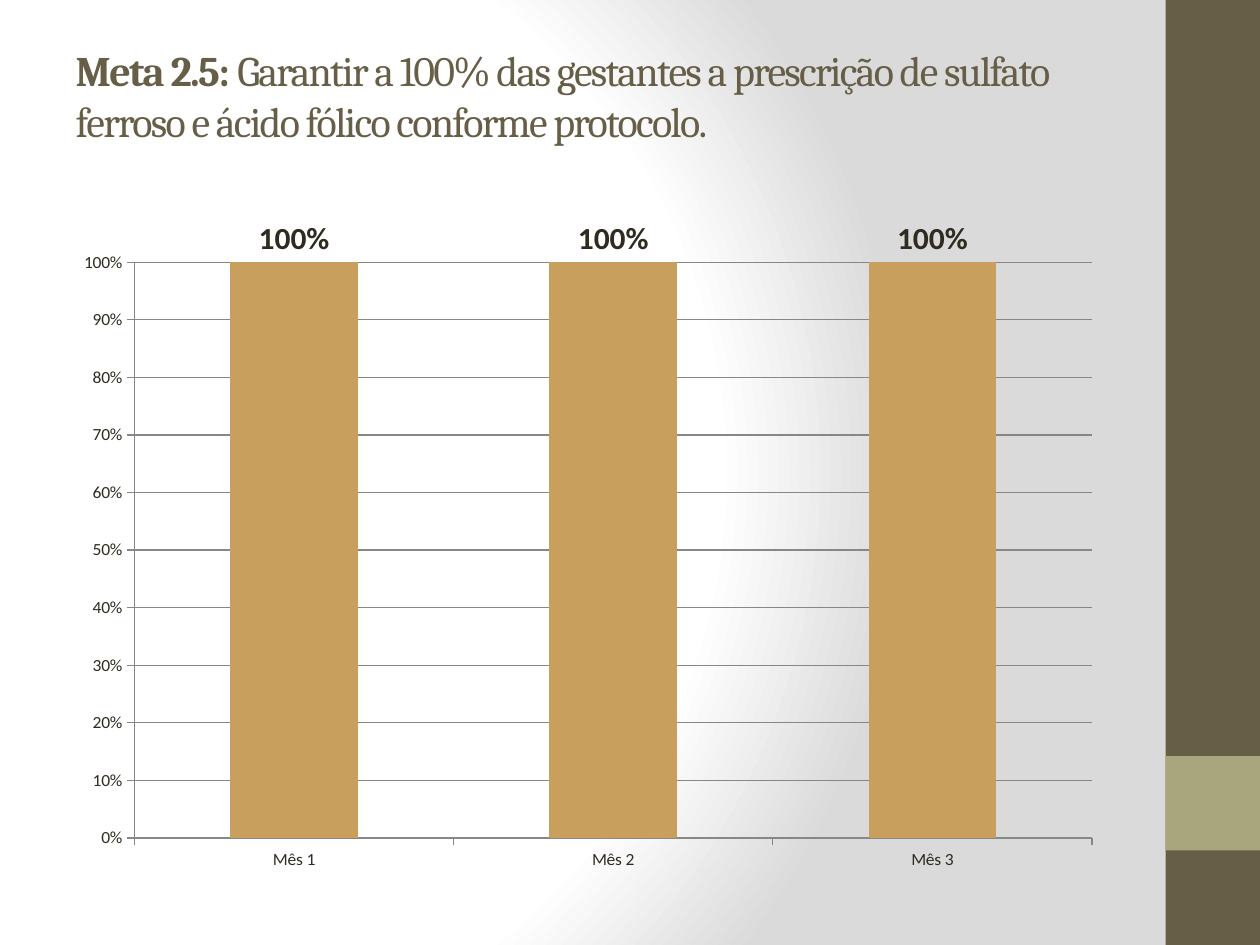
import pptx
import pptx.chart.data
import pptx.dml.color
import pptx.enum.chart
import pptx.enum.text
import pptx.enum.shapes
import pptx.oxml
import pptx.oxml.ns
import pptx.util

Pt = pptx.util.Pt

COLOURS = {
    "white": "FFFFFF",
    "grey": "DADADA",
    "olive": "675E47",
    "sage": "A9A57C",
    "tan": "C89F5D",
    "ink": "2F2B20",
    "line": "878787",
}
BACKGROUND_STOPS = [(0, "white"), (75, "white"), (100, "grey")]
MONTHS = ["Mês 1", "Mês 2", "Mês 3"]
TITLE_PARTS = [
    ("Meta 2.5: ", True),
    ("Garantir a 100% das gestantes a prescrição de sulfato ferroso "
     "e ácido fólico conforme protocolo.", False),
]


def rgb(name):
    return pptx.dml.color.RGBColor.from_string(COLOURS[name])


def set_format(target, values):
    for name, value in values.items():
        setattr(target, name, value)


def set_font(font, colour, **values):
    set_format(font, values)
    font.color.rgb = rgb(colour)


def paint_background(page):
    """Fill the page with a radial gradient, which needs XML."""
    page.background.fill.gradient()
    gradient = page.element.find(".//" + pptx.oxml.ns.qn("a:gradFill"))
    stops = "".join(
        f'<a:gs pos="{position * 1000}"><a:srgbClr val="{COLOURS[name]}"/></a:gs>'
        for position, name in BACKGROUND_STOPS
    )
    radial = pptx.oxml.parse_xml(
        f'<a:gradFill {pptx.oxml.ns.nsdecls("a")} rotWithShape="1">'
        f"<a:gsLst>{stops}</a:gsLst>"
        '<a:path path="circle">'
        '<a:fillToRect l="20000" t="50000" r="100000" b="50000"/>'
        "</a:path></a:gradFill>"
    )
    gradient.getparent().replace(gradient, radial)


def add_band(page, top, height, colour):
    band = page.shapes.add_shape(
        pptx.enum.shapes.MSO_SHAPE.RECTANGLE, Pt(666), Pt(top), Pt(54), Pt(height)
    )
    band.shadow.inherit = False
    band.fill.solid()
    band.fill.fore_color.rgb = rgb(colour)
    band.line.fill.background()


def write_title(page):
    title = page.shapes.title
    set_format(title, {
        "left": Pt(36), "top": Pt(21.6), "width": Pt(600), "height": Pt(90),
    })
    frame = title.text_frame
    set_format(frame, {
        "word_wrap": True,
        "auto_size": pptx.enum.text.MSO_AUTO_SIZE.NONE,
        "vertical_anchor": pptx.enum.text.MSO_ANCHOR.MIDDLE,
        "margin_bottom": Pt(28),
    })
    para = frame.paragraphs[0]
    para.alignment = pptx.enum.text.PP_ALIGN.LEFT
    for text, bold in TITLE_PARTS:
        span = para.add_run()
        span.text = text
        set_font(span.font, "olive", name="Cambria", size=Pt(24), bold=bold)
        span.font._element.set("spc", "-100")


def format_axis(axis):
    axis.major_tick_mark = pptx.enum.chart.XL_TICK_MARK.OUTSIDE
    axis.minor_tick_mark = pptx.enum.chart.XL_TICK_MARK.NONE
    axis.format.line.color.rgb = rgb("line")


def add_column_chart(page):
    data = pptx.chart.data.CategoryChartData(number_format="0%")
    data.categories = MONTHS
    data.add_series("Series 1", [1] * len(MONTHS))
    chart = page.shapes.add_chart(
        pptx.enum.chart.XL_CHART_TYPE.COLUMN_CLUSTERED,
        Pt(36), Pt(126), Pt(600), Pt(378), data,
    ).chart
    set_format(chart, {"has_legend": False, "has_title": False})
    set_font(chart.font, "ink", name="Calibri", size=Pt(10))

    value_axis = chart.value_axis
    for axis in (chart.category_axis, value_axis):
        format_axis(axis)
    set_format(value_axis, {
        "minimum_scale": 0, "maximum_scale": 1, "major_unit": 0.1,
        "has_major_gridlines": True,
    })
    value_axis.major_gridlines.format.line.color.rgb = rgb("line")
    set_format(value_axis.tick_labels, {
        "number_format": "0%", "number_format_is_linked": False,
    })

    plot = chart.plots[0]
    set_format(plot, {"gap_width": 150, "vary_by_categories": False})
    series = plot.series[0]
    series.format.fill.solid()
    series.format.fill.fore_color.rgb = rgb("tan")
    labels = series.data_labels
    set_format(labels, {
        "show_value": True, "number_format": "0%",
        "number_format_is_linked": False,
        "position": pptx.enum.chart.XL_LABEL_POSITION.OUTSIDE_END,
    })
    set_font(labels.font, "ink", name="Calibri", size=Pt(18), bold=True)


def main():
    deck = pptx.Presentation()
    set_format(deck, {"slide_width": Pt(720), "slide_height": Pt(540)})
    page = deck.slides.add_slide(deck.slide_layouts.get_by_name("Title Only"))
    paint_background(page)
    add_band(page, 0, 540, "olive")
    add_band(page, 432, 54, "sage")
    write_title(page)
    add_column_chart(page)
    deck.save("out.pptx")


if __name__ == "__main__":
    main()
